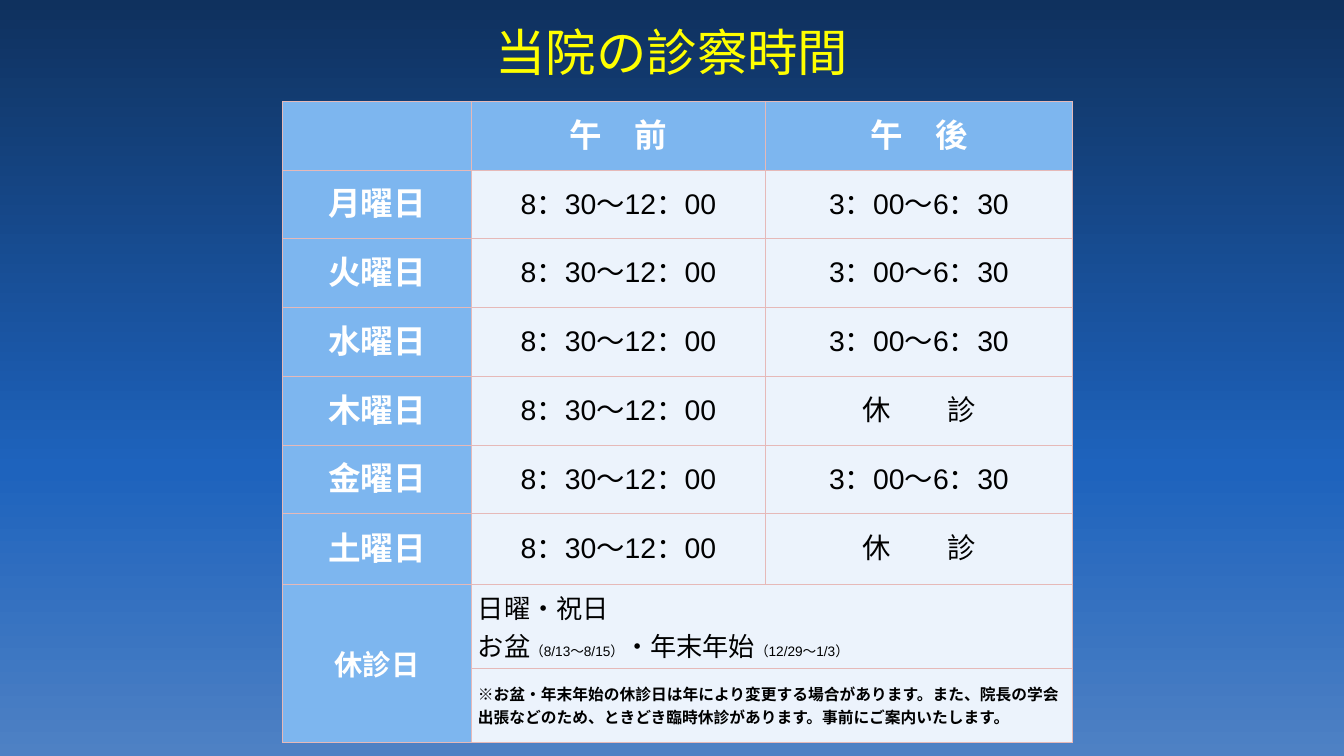
from copy import deepcopy

from lxml.etree import SubElement as Sub
from pptx import Presentation
from pptx.dml.color import RGBColor as RGB
from pptx.enum.text import MSO_ANCHOR as Anchor, PP_ALIGN as Align
from pptx.oxml.ns import qn
from pptx.util import Pt

COLORS = {
    "top": "0F315E", "mid": "1E63BD", "low": "4E81C4",
    "title": "FFFF00", "head": "7DB6EF", "body": "ECF3FC",
    "line": "E6B9B8", "white": "FFFFFF", "black": "000000",
}


def add_run(para, text, size, color, bold=False):
    run = para.add_run()
    run.text = text
    font = run.font
    font.name, font.size, font.bold = "Arial", Pt(size), bold
    font.color.rgb = RGB.from_string(COLORS[color])


def style_cell(cell, fill, pads):
    """Set borders, fill, anchor and margins (left, top, right, bottom)."""
    props = cell._tc.get_or_add_tcPr()
    for side in ("lnL", "lnR", "lnT", "lnB"):
        line = Sub(props, qn(f"a:{side}"), w=str(Pt(1)))
        solid = Sub(line, qn("a:solidFill"))
        Sub(solid, qn("a:srgbClr"), val=COLORS["line"])
    cell.fill.solid()
    cell.fill.fore_color.rgb = RGB.from_string(COLORS[fill])
    cell.vertical_anchor = Anchor.MIDDLE
    (cell.margin_left, cell.margin_top,
     cell.margin_right, cell.margin_bottom) = map(Pt, pads)


deck = Presentation()
deck.slide_width, deck.slide_height = Pt(1280), Pt(720)
slide = deck.slides.add_slide(deck.slide_layouts[5])

# Background
back = slide.background.fill
back.gradient()
back.gradient_angle = 270
first = back.gradient_stops[0]._gs
first.addnext(deepcopy(first))
for stop, name, pos in zip(back.gradient_stops, ("top", "mid", "low"), (0, 0.62, 1)):
    stop.color.rgb = RGB.from_string(COLORS[name])
    stop.position = pos

# Title
title = slide.shapes.title
title.left, title.top, title.width, title.height = map(Pt, (263.5, 16, 753, 65.5))
title.text_frame.vertical_anchor = Anchor.MIDDLE
para = title.text_frame.paragraphs[0]
para.alignment = Align.CENTER
add_run(para, "当院の診察時間", 48, "title")

# Timetable
widths = (179.3, 280.8, 291.6)
heights = [65.5] * 6 + [67.5, 77, 70.5]
table = slide.shapes.add_table(
    len(heights), len(widths), Pt(269.3), Pt(96.5),
    Pt(sum(widths)), Pt(sum(heights))).table
table.first_row = table.horz_banding = False
for col, width in zip(table.columns, widths):
    col.width = Pt(width)
for row, height in zip(table.rows, heights):
    row.height = Pt(height)

for r in range(len(heights)):
    pads = (2, 2, 2, 7.2) if r < 7 else (6.5, 3.6, 6.5, 3.6)
    for c in range(len(widths)):
        style_cell(table.cell(r, c), "head" if r == 0 or c == 0 else "body", pads)

am, pm, closed = "8：30～12：00", "3：00～6：30", "休　　診"
hours = [("", "午　前", "午　後")]
for day in "月火水木金土":
    hours.append((f"{day}曜日", am, closed if day in "木土" else pm))
for r, texts in enumerate(hours):
    for c, text in enumerate(texts):
        if not text:
            continue
        para = table.cell(r, c).text_frame.paragraphs[0]
        para.alignment = Align.CENTER
        if r == 0 or c == 0:
            add_run(para, text, 31, "white", True)
        else:
            add_run(para, text, 27, "black")

# Closed days
table.cell(7, 0).merge(table.cell(8, 0))
para = table.cell(7, 0).text_frame.paragraphs[0]
para.alignment = Align.CENTER
add_run(para, "休診日", 27, "white", True)

notes = {
    7: [[("日曜・祝日", 25)],
        [("お盆", 25), ("（8/13～8/15）", 13),
         ("・年末年始", 25), ("（12/29～1/3）", 13)]],
    8: [[("※お盆・年末年始の休診日は年により変更する場合があります。また、院長の学会", 15)],
        [("出張などのため、ときどき臨時休診があります。事前にご案内いたします。", 15)]],
}
for r, lines in notes.items():
    cell = table.cell(r, 1)
    cell.merge(table.cell(r, 2))
    frame = cell.text_frame
    for i, line in enumerate(lines):
        para = frame.add_paragraph() if i else frame.paragraphs[0]
        for text, size in line:
            add_run(para, text, size, "black", r == 8)

deck.save("out.pptx")
